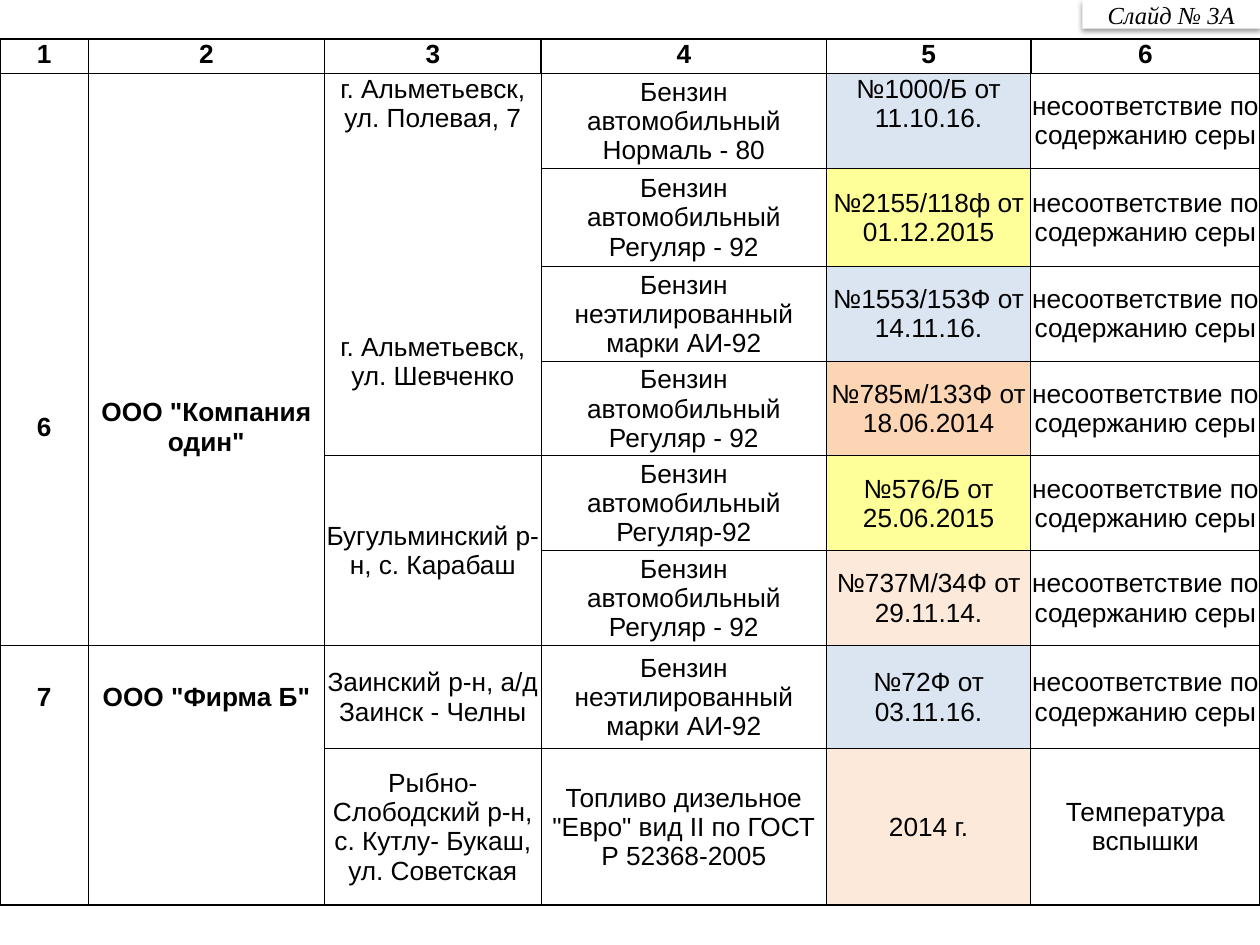
from lxml import etree
from pptx import Presentation
from pptx.dml.color import RGBColor
from pptx.enum.shapes import MSO_SHAPE
from pptx.enum.text import MSO_ANCHOR, PP_ALIGN
from pptx.oxml.ns import qn
from pptx.util import Cm, Pt

RECT = MSO_SHAPE.RECTANGLE
TOP, MIDDLE = MSO_ANCHOR.TOP, MSO_ANCHOR.MIDDLE
CENTER = PP_ALIGN.CENTER
PLAIN_STYLE = "{2D5ABB26-0587-4C30-8999-92F81FD0307C}"
BLACK, WHITE = "000000", "FFFFFF"
BLUE, YELLOW, ORANGE, PEACH = "DBE5F1", "FFFF99", "FCD5B4", "FDE9D9"

COL_WIDTHS = [1.78, 4.76, 4.37, 5.75, 4.12, 4.62]
ROW_HEIGHTS = [0.69, 1.91, 0.81, 1.17, 1.91, 1.91, 1.91, 1.91, 2.08, 3.15]
THICK_ROW_LINES = {0, 1, 8, 10}
OPEN_ROW_LINES = {3, 9}

SULFUR = "несоответствие по содержанию серы"
REGULAR = "Бензин автомобильный Регуляр - 92"
UNLEADED = "Бензин неэтилированный марки АИ-92"

OWNERS = [
    (1, 0, 2, ""), (1, 1, 2, ""),
    (3, 0, 5, "6"), (3, 1, 5, 'ООО "Компания один"'),
    (8, 0, 1, "7"), (8, 1, 1, 'ООО "Фирма Б"'),
    (9, 0, 1, ""), (9, 1, 1, ""),
]
ADDRESSES = [
    (1, 2, 3, "г. Альметьевск, ул. Полевая, 7"),
    (4, 2, 2, "г. Альметьевск, ул. Шевченко"),
    (6, 2, 2, "Бугульминский р-н, с. Карабаш"),
    (8, 2, 1, "Заинский р-н, а/д Заинск - Челны"),
    (9, 2, 1, "Рыбно- Слободский р-н, с. Кутлу- Букаш, ул. Советская"),
]
SAMPLES = [
    (1, 1, "Бензин автомобильный Нормаль - 80", "№1000/Б от 11.10.16.", BLUE, SULFUR),
    (2, 2, REGULAR, "№2155/118ф от 01.12.2015", YELLOW, SULFUR),
    (4, 1, UNLEADED, "№1553/153Ф от 14.11.16.", BLUE, SULFUR),
    (5, 1, REGULAR, "№785м/133Ф от 18.06.2014", ORANGE, SULFUR),
    (6, 1, "Бензин автомобильный Регуляр-92", "№576/Б от 25.06.2015", YELLOW, SULFUR),
    (7, 1, REGULAR, "№737М/34Ф от 29.11.14.", PEACH, SULFUR),
    (8, 1, UNLEADED, "№72Ф от 03.11.16.", BLUE, SULFUR),
    (9, 1, 'Топливо дизельное "Евро" вид II по ГОСТ Р 52368-2005', "2014 г.", PEACH,
     "Температура вспышки"),
]


def rgb(value):
    return RGBColor.from_string(value)


def style_text(p, name, size, bold=False, italic=False):
    p.alignment = CENTER
    p.font.name = name
    p.font.size = Pt(size)
    p.font.bold = bold
    p.font.italic = italic
    p.font.color.rgb = rgb(BLACK)


def set_border(cell, side, width):
    ln = etree.SubElement(cell._tc.get_or_add_tcPr(), qn(f"a:ln{side}"))
    if width is None:
        etree.SubElement(ln, qn("a:noFill"))
        return
    ln.set("w", str(Pt(width)))
    fill = etree.SubElement(ln, qn("a:solidFill"))
    etree.SubElement(fill, qn("a:srgbClr"), val=BLACK)


def row_line(line, col):
    if col < 2 and line in OPEN_ROW_LINES:
        return None
    return 1 if line in THICK_ROW_LINES else 0.5


def col_line(line, row):
    return 1 if row == 0 or line in (0, len(COL_WIDTHS)) else 0.5


def format_cell(cell, row, col, first, last, fill, anchor):
    cell.margin_left = cell.margin_right = cell.margin_top = Cm(0.02)
    cell.margin_bottom = 0
    cell.vertical_anchor = anchor
    set_border(cell, "L", col_line(col, row))
    set_border(cell, "R", col_line(col + 1, row))
    set_border(cell, "T", row_line(row, col) if row == first else None)
    set_border(cell, "B", row_line(row + 1, col) if row == last else None)
    if fill:
        cell.fill.solid()
        cell.fill.fore_color.rgb = rgb(fill)
    else:
        cell.fill.background()
    style_text(cell.text_frame.paragraphs[0], "Arial", 15, bold=row == 0 or col < 2)


def fill_block(table, row, col, span, text, fill=None, anchor=MIDDLE):
    last = row + span - 1
    origin = table.cell(row, col)
    if span > 1:
        origin.merge(table.cell(last, col))
    origin.text = text
    for r in range(row, last + 1):
        format_cell(table.cell(r, col), r, col, row, last, fill, anchor)


def add_violations_table(s):
    frame = s.shapes.add_table(len(ROW_HEIGHTS), len(COL_WIDTHS), 0, Cm(0.79),
                               Cm(sum(COL_WIDTHS)), Cm(sum(ROW_HEIGHTS)))
    table = frame.table
    table.first_row = table.horz_banding = False
    table._tbl.tblPr.find(qn("a:tableStyleId")).text = PLAIN_STYLE
    for column, width in zip(table.columns, COL_WIDTHS):
        column.width = Cm(width)
    for row, height in zip(table.rows, ROW_HEIGHTS):
        row.height = Cm(height)
    for col in range(len(COL_WIDTHS)):
        fill_block(table, 0, col, 1, str(col + 1), anchor=TOP)
    for row, col, span, text in OWNERS + ADDRESSES:
        fill_block(table, row, col, span, text, anchor=TOP if (row, col) == (1, 2) else MIDDLE)
    for row, span, fuel, protocol, color, defect in SAMPLES:
        fill_block(table, row, 3, span, fuel)
        fill_block(table, row, 4, span, protocol, color, TOP if row == 1 else MIDDLE)
        fill_block(table, row, 5, span, defect)


def add_shadow(sp):
    sp.shadow.inherit = False
    effects = sp._element.spPr.find(qn("a:effectLst"))
    shadow = etree.SubElement(effects, qn("a:outerShdw"), blurRad=str(Pt(3.1)),
                              dist=str(Pt(1.6)), dir="5400000", rotWithShape="0")
    color = etree.SubElement(shadow, qn("a:srgbClr"), val=BLACK)
    etree.SubElement(color, qn("a:alpha"), val="38000")


def add_slide_label(s, text):
    sp = s.shapes.add_shape(RECT, Cm(21.82), 0, Cm(3.58), Cm(0.58))
    sp.fill.solid()
    sp.fill.fore_color.rgb = rgb(WHITE)
    sp.line.fill.background()
    add_shadow(sp)
    tf = sp.text_frame
    tf.word_wrap = True
    tf.margin_top = tf.margin_bottom = 0
    tf.vertical_anchor = MIDDLE
    tf.text = text
    style_text(tf.paragraphs[0], "Times New Roman", 14, italic=True)


def main():
    prs = Presentation()
    prs.slide_width, prs.slide_height = Cm(25.4), Cm(19.05)
    s = prs.slides.add_slide(prs.slide_layouts[6])
    add_violations_table(s)
    add_slide_label(s, "Слайд № 3А")
    prs.save("out.pptx")


if __name__ == "__main__":
    main()
